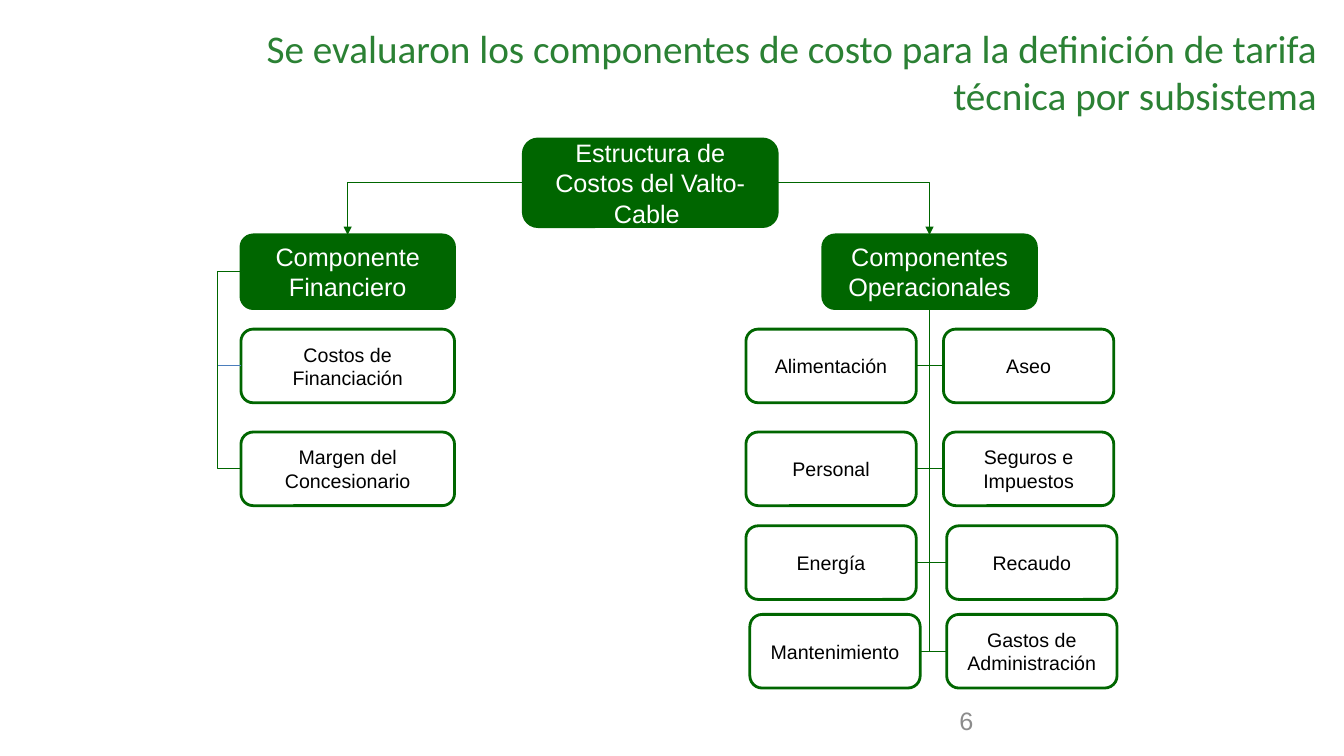
from dataclasses import dataclass

from lxml import etree
from pptx import Presentation
from pptx.dml.color import RGBColor
from pptx.enum.shapes import MSO_CONNECTOR, MSO_SHAPE
from pptx.enum.text import MSO_ANCHOR, MSO_AUTO_SIZE, PP_ALIGN
from pptx.oxml.ns import qn
from pptx.util import Pt

ELBOW = MSO_CONNECTOR.ELBOW
ROUNDED = MSO_SHAPE.ROUNDED_RECTANGLE
MIDDLE, TOP = MSO_ANCHOR.MIDDLE, MSO_ANCHOR.TOP
NO_FIT = MSO_AUTO_SIZE.NONE
LEFT, CENTER, RIGHT = PP_ALIGN.LEFT, PP_ALIGN.CENTER, PP_ALIGN.RIGHT


@dataclass(frozen=True)
class Theme:
    """Colours, fonts and sizes of the slide."""
    green: str = "006600"
    title_green: str = "2B8134"
    blue: str = "4B7EBC"
    gray: str = "8C8C8C"
    white: str = "FFFFFF"
    black: str = "000000"
    title_font: str = "Calibri"
    body_font: str = "Arial"
    title_size: float = 28
    header_size: float = 18
    item_size: float = 14
    border: float = 2
    link: float = 0.75


@dataclass(frozen=True)
class Box:
    """A rectangle in points."""
    left: float
    top: float
    width: float
    height: float

    @property
    def right(self):
        """Return the right edge."""
        return self.left + self.width

    @property
    def bottom(self):
        """Return the bottom edge."""
        return self.top + self.height

    @property
    def center(self):
        """Return the horizontal centre."""
        return self.left + self.width / 2

    @property
    def middle(self):
        """Return the vertical centre."""
        return self.top + self.height / 2

    def lengths(self):
        """Return left, top, width and height as lengths."""
        return [Pt(value) for value in (self.left, self.top, self.width, self.height)]


THEME = Theme()
ROW_TOPS = (235.1, 308.6, 375.6, 438.9)
ITEM_HEIGHT = 52.6
FINANCIAL_ITEMS = (
    ("Costos de Financiación", THEME.blue),
    ("Margen del Concesionario", THEME.green),
)
OPERATIONAL_ROWS = (
    ("Alimentación", -131.2, "Aseo", 9.9),
    ("Personal", -131.2, "Seguros e Impuestos", 9.9),
    ("Energía", -131.2, "Recaudo", 12.2),
    ("Mantenimiento", -128.4, "Gastos de Administración", 12.2),
)


def write(frame, text, size=THEME.item_size, color=THEME.black,
          font=THEME.body_font, align=CENTER, anchor=MIDDLE):
    """Put formatted text in a text frame."""
    frame.word_wrap = True
    frame.auto_size = NO_FIT
    frame.vertical_anchor = anchor
    paragraph = frame.paragraphs[0]
    paragraph.alignment = align
    run = paragraph.add_run()
    run.text = text
    run.font.size = Pt(size)
    run.font.name = font
    run.font.color.rgb = RGBColor.from_string(color)


def add_card(slide, box, text, fill=THEME.white, **text_format):
    """Draw a rounded card with a green border."""
    card = slide.shapes.add_shape(ROUNDED, *box.lengths())
    card.shadow.inherit = False
    card.fill.solid()
    card.fill.fore_color.rgb = RGBColor.from_string(fill)
    card.line.color.rgb = RGBColor.from_string(THEME.green)
    card.line.width = Pt(THEME.border)
    write(card.text_frame, text, **text_format)


def add_header(slide, box, text):
    """Draw a filled header card."""
    add_card(slide, box, text, fill=THEME.green, size=THEME.header_size, color=THEME.white)


def add_elbow(slide, start, end, color=THEME.green, bend=None, arrow=False):
    """Draw an elbow with one corner, or with a bend at a multiple of its width."""
    points = [Pt(value) for value in (*start, *end)]
    elbow = slide.shapes.add_connector(ELBOW, *points)
    elbow.line.color.rgb = RGBColor.from_string(color)
    elbow.line.width = Pt(THEME.link)
    properties = elbow._element.spPr
    geometry = properties.find(qn("a:prstGeom"))
    if bend is None:
        geometry.set("prst", "bentConnector2")
    else:
        guide = etree.SubElement(geometry.find(qn("a:avLst")), qn("a:gd"))
        guide.set("name", "adj1")
        guide.set("fmla", f"val {round(bend * 100000)}")
    if arrow:
        tail = etree.SubElement(properties.find(qn("a:ln")), qn("a:tailEnd"))
        tail.set("type", "triangle")
    etree.SubElement(properties, qn("a:effectLst"))


def add_title(slide, box):
    """Place the slide title."""
    title = slide.shapes.title
    title.left, title.top, title.width, title.height = box.lengths()
    write(title.text_frame,
          "Se evaluaron los componentes de costo para la definición de tarifa "
          "técnica por subsistema",
          size=THEME.title_size, color=THEME.title_green,
          font=THEME.title_font, align=RIGHT)


def add_page_number(slide, box):
    """Place the page number."""
    number = slide.shapes.add_textbox(*box.lengths())
    write(number.text_frame, "6", size=THEME.header_size, color=THEME.gray,
          align=LEFT, anchor=TOP)


def add_root(slide, box, branches):
    """Draw the root card and its arrows to the branch headers."""
    add_header(slide, box, "Estructura de Costos del Valto-Cable ")
    for branch in branches:
        side = box.left if branch.center < box.center else box.right
        add_elbow(slide, (side, box.middle), (branch.center, branch.top), arrow=True)


def add_financial_branch(slide, box):
    """Draw the financial header with its items joined by a left bracket."""
    add_header(slide, box, "Componente Financiero")
    for (text, color), top in zip(FINANCIAL_ITEMS, ROW_TOPS):
        item = Box(box.left, top, box.width, ITEM_HEIGHT)
        add_card(slide, item, text)
        add_elbow(slide, (box.left + 1, box.middle), (item.left, item.middle),
                  color=color, bend=18)


def add_operational_branch(slide, box):
    """Draw the operational header with pairs of items along a trunk."""
    add_header(slide, box, "Componentes Operacionales")
    trunk = (box.center, box.bottom)
    for (left_text, left_shift, right_text, right_shift), top in zip(OPERATIONAL_ROWS, ROW_TOPS):
        left_item, right_item = (
            Box(box.center + shift, top, 121.7, ITEM_HEIGHT)
            for shift in (left_shift, right_shift)
        )
        add_card(slide, left_item, left_text)
        add_card(slide, right_item, right_text)
        add_elbow(slide, (left_item.right, left_item.middle), trunk)
        add_elbow(slide, (right_item.left, right_item.middle), trunk)


def main():
    """Build and save the slide."""
    presentation = Presentation()
    presentation.slide_width, presentation.slide_height = Pt(960), Pt(540)
    slide = presentation.slides.add_slide(presentation.slide_layouts[5])
    financial = Box(172.1, 167.8, 152.6, ITEM_HEIGHT)
    operational = Box(587.7, 167.8, 152.6, ITEM_HEIGHT)
    add_title(slide, Box(100.3, 15, 847.4, 71.3))
    add_page_number(slide, Box(678.2, 500.4, 216, 28.8))
    add_root(slide, Box(373.8, 99.3, 181.4, 62.6), (financial, operational))
    add_financial_branch(slide, financial)
    add_operational_branch(slide, operational)
    presentation.save("out.pptx")


if __name__ == "__main__":
    main()
